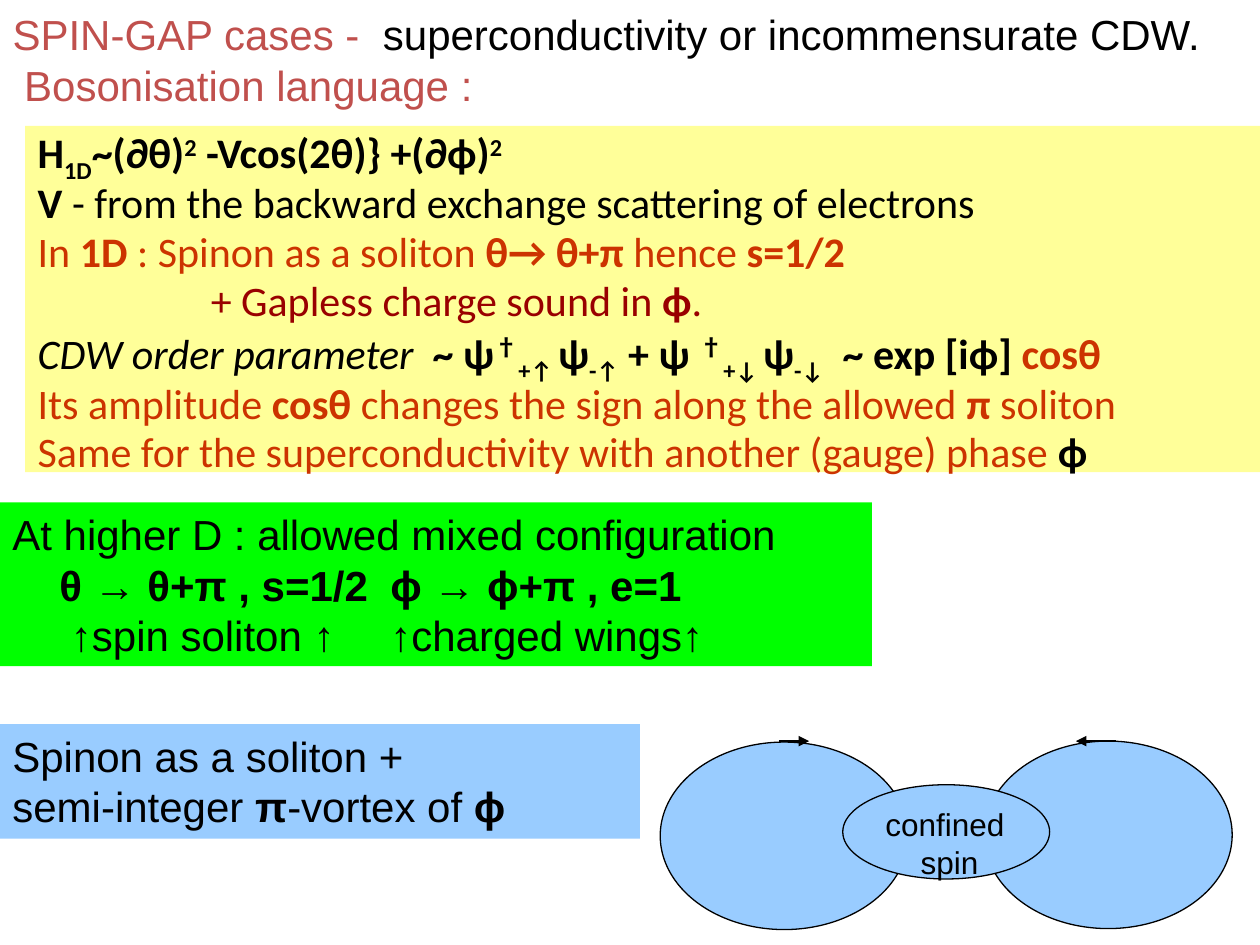
from lxml import etree
from pptx import Presentation
from pptx.dml.color import RGBColor
from pptx.enum.shapes import MSO_CONNECTOR, MSO_SHAPE
from pptx.enum.text import MSO_ANCHOR, MSO_AUTO_SIZE, PP_ALIGN
from pptx.oxml.ns import qn
from pptx.util import Cm, Pt

RECTANGLE, OVAL = MSO_SHAPE.RECTANGLE, MSO_SHAPE.OVAL
STRAIGHT = MSO_CONNECTOR.STRAIGHT
TOP, LEFT = MSO_ANCHOR.TOP, PP_ALIGN.LEFT
NO_AUTOFIT = MSO_AUTO_SIZE.NONE

COLORS = {
    "black": "000000",
    "heading": "C0504D",
    "orange": "CC3300",
    "maroon": "990000",
    "yellow": "FFFF99",
    "green": "00FF00",
    "blue": "99CCFF",
}
BASELINES = {"^": "30000", "_": "-25000"}
DAGGER_FONT = "Noto Sans CJK JP"


def color(name):
    return RGBColor.from_string(COLORS[name])


class SlideBuilder:
    def __init__(self, slide, font="Arial", size=24):
        self.slide = slide
        self.font = font
        self.size = size

    def prepare_frame(self, shape):
        frame = shape.text_frame
        frame.word_wrap = True
        frame.auto_size = NO_AUTOFIT
        frame.vertical_anchor = TOP
        return frame

    def runs(self, paragraph, parts):
        """Add (text, marks, color) parts; marks are b, i, ^ (super) and _ (sub)."""
        for text, marks, name in parts:
            run = paragraph.add_run()
            run.text = text
            run.font.bold = "b" in marks
            if "i" in marks:
                run.font.italic = True
            if text == "†":
                run.font.name = DAGGER_FONT
            run.font.color.rgb = color(name)
            for mark in BASELINES:
                if mark in marks:
                    run.font._element.set("baseline", BASELINES[mark])

    def paragraphs(self, frame, lines, font=None, size=None, tab=None, spaced=False):
        """Fill a frame with (left, first-line indent, parts) lines, indents in cm."""
        for index, (left, indent, parts) in enumerate(lines):
            paragraph = frame.add_paragraph() if index else frame.paragraphs[0]
            properties = paragraph._p.get_or_add_pPr()
            properties.set("marL", str(Cm(left)))
            properties.set("indent", str(Cm(indent)))
            if tab:
                stops = etree.SubElement(properties, qn("a:tabLst"))
                etree.SubElement(stops, qn("a:tab"), pos=str(Cm(tab)), algn="l")
            paragraph.alignment = LEFT
            paragraph.font.name = font or self.font
            paragraph.font.size = Pt(size or self.size)
            if spaced:
                paragraph.line_spacing = 0.8
                paragraph.space_before = Pt(4.8)
            self.runs(paragraph, parts)

    def title(self, box, lines):
        shape = self.slide.shapes.title
        shape.left, shape.top, shape.width, shape.height = map(Cm, box)
        paragraph = self.prepare_frame(shape).paragraphs[0]
        paragraph.alignment = LEFT
        paragraph.font.name = self.font
        paragraph.font.size = Pt(self.size)
        for index, parts in enumerate(lines):
            if index:
                paragraph.add_line_break()
            self.runs(paragraph, parts)

    def panel(self, box, fill, lines, **style):
        shape = self.filled(self.slide.shapes, RECTANGLE, box, fill)
        shape.line.fill.background()
        self.paragraphs(self.prepare_frame(shape), lines, **style)

    def filled(self, shapes, kind, box, fill):
        shape = shapes.add_shape(kind, *map(Cm, box))
        shape.shadow.inherit = False
        shape.fill.solid()
        shape.fill.fore_color.rgb = color(fill)
        return shape

    def ellipse(self, shapes, box, fill="blue"):
        shape = self.filled(shapes, OVAL, box, fill)
        shape.line.color.rgb = color("black")
        shape.line.width = Pt(0.75)
        return shape

    def arrow(self, shapes, start, end, y):
        connector = shapes.add_connector(STRAIGHT, Cm(start), Cm(y), Cm(end), Cm(y))
        connector.line.color.rgb = color("black")
        connector.line.width = Pt(0.75)
        etree.SubElement(connector.line._get_or_add_ln(), qn("a:tailEnd"), type="triangle")
        etree.SubElement(connector._element.spPr, qn("a:effectLst"))


def black(text, marks=""):
    return text, marks, "black"


def orange(text, marks=""):
    return text, marks, "orange"


def maroon(text, marks=""):
    return text, marks, "maroon"


def main():
    presentation = Presentation()
    presentation.slide_width, presentation.slide_height = Cm(25.4), Cm(19.05)
    slide = presentation.slides.add_slide(presentation.slide_layouts[5])
    builder = SlideBuilder(slide)

    builder.title((0, 0.05, 25.1, 2.31), [
        [("SPIN-GAP cases -  ", "", "heading"),
         black("superconductivity or incommensurate CDW.")],
        [(" Bosonisation language :", "", "heading")],
    ])

    hanging = (0.95, -0.95)
    builder.panel((0.51, 2.54, 24.89, 6.98), "yellow", [
        (*hanging, [black("Η", "b"), black("1D", "b_"), black("~(∂θ)", "b"),
                    black("2", "b^"), black(" -Vcos(2θ)} +(∂ϕ)", "b"), black("2", "b^")]),
        (*hanging, [black("V", "b"),
                    black(" - from the backward exchange scattering of electrons")]),
        (*hanging, [orange("In "), orange("1D", "b"), orange(" : Spinon as a soliton "),
                    orange("θ→ θ+π ", "b"), orange("hence"), orange(" s=1/2", "b")]),
        (3.49, 0, [maroon("+ Gapless charge sound in "), maroon("ϕ", "b"), maroon(".")]),
        (*hanging, [black("CDW order parameter  ", "i"), black("~ ψ", "b"),
                    black("†", "b^"), black("+↑ ", "b_"), black("ψ", "b"),
                    black("-↑", "b_"), black(" + ψ ", "b"), black("†", "b^"),
                    black("+↓ ", "b_"), black("ψ", "b"), black("-↓", "b_"),
                    black("  ~ exp [iϕ] ", "b"), orange("cosθ", "b")]),
        (*hanging, [orange("Its amplitude "), orange("cosθ", "b"),
                    orange(" changes the sign along the allowed "),
                    orange("π ", "b"), orange("soliton")]),
        (*hanging, [orange("Same for the superconductivity with another (gauge) phase "),
                    black("ϕ", "b")]),
    ], font="Calibri", spaced=True)

    builder.panel((0, 10.13, 17.58, 3.3), "green", [
        (0, 0, [black("At higher D : allowed mixed configuration")]),
        (0, 0.95, [black("θ → θ+π , s=1/2\tϕ → ϕ+π , e=1", "b")]),
        (0, 1.18, [black("↑spin soliton ↑\t↑charged wings↑")]),
    ], tab=10.16)

    builder.panel((0, 14.6, 12.9, 2.31), "blue", [
        (0, 0, [black("Spinon as a soliton +")]),
        (0, 0, [black("semi-integer "), black("π", "b"), black("-vortex of "),
                black("ϕ", "b")]),
    ])

    wings = slide.shapes.add_group_shape().shapes
    for left, top in ((13.31, 14.96), (19.84, 14.94)):
        builder.ellipse(wings, (left, top, 5, 3.78))
    core = builder.ellipse(wings, (16.99, 15.82, 4.17, 1.9))
    frame = builder.prepare_frame(core)
    frame.margin_right = 0
    builder.paragraphs(frame, [(0, 0, [black("confined")]), (0, 0.71, [black("spin")])], size=18)
    for start, end in ((15.7, 16.31), (22.5, 21.69)):
        builder.arrow(wings, start, end, 14.94)

    presentation.save("out.pptx")


if __name__ == "__main__":
    main()
